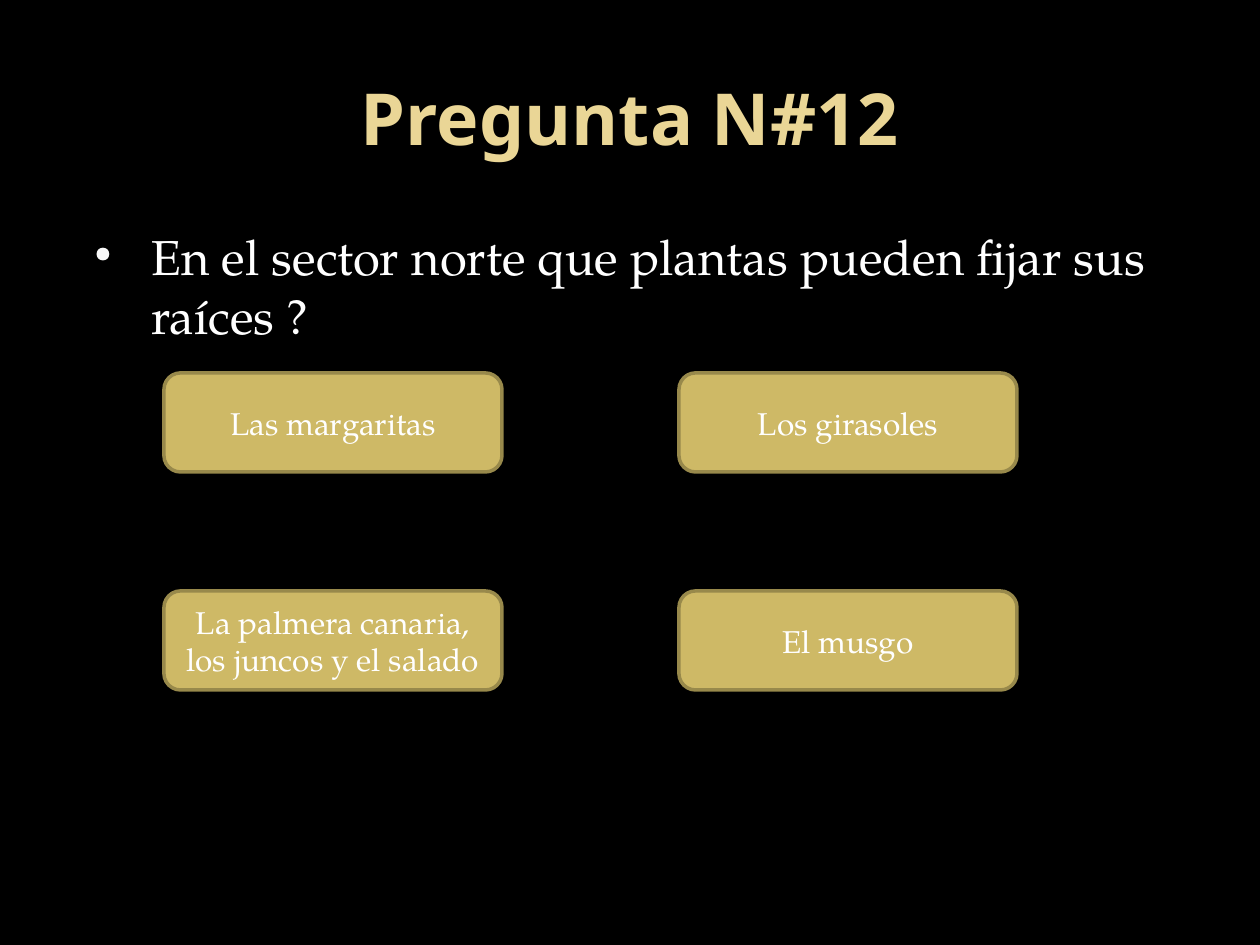
from lxml.etree import SubElement
from pptx import Presentation
from pptx.dml.color import RGBColor
from pptx.enum.shapes import MSO_SHAPE
from pptx.enum.text import MSO_ANCHOR, PP_ALIGN
from pptx.oxml.ns import qn
from pptx.util import Emu, Pt

TITLE = "Pregunta N#12"
QUESTION = "En el sector norte que plantas pueden fijar sus raíces ?"
ANSWERS = [
    ["Las margaritas", "Los girasoles"],
    ["La palmera canaria, los juncos y el salado", "El musgo"],
]

BLACK = RGBColor(0x00, 0x00, 0x00)
WHITE = RGBColor(0xFF, 0xFF, 0xFF)
BULLET_WHITE = RGBColor(0xF9, 0xF9, 0xF9)
PALE_GOLD = RGBColor(0xEA, 0xD6, 0x96)
GOLD = RGBColor(0xCE, 0xB9, 0x66)
DARK_GOLD = RGBColor(0x98, 0x89, 0x4B)
TITLE_FONT = "Noto Sans"
BODY_FONT = "TeX Gyre Pagella"

EMU_PER_PX = 914400 // 126
SLIDE_SIZE = (1260, 945)
TITLE_BOX = (63, 38, 1134, 157)
QUESTION_BOX = (63, 220, 1134, 649)
ANSWER_LEFT, ANSWER_TOP = 164, 373
ANSWER_SIZE = (338, 99)
COLUMN_STEP, ROW_STEP = 515, 218
BULLET_INDENT, BULLET_HANG = 76, 57


def px(length):
    return Emu(length * EMU_PER_PX)


def place(shape, box):
    shape.left, shape.top, shape.width, shape.height = map(px, box)


def write(shape, text, font, size, color, align, anchor, bold=False):
    frame = shape.text_frame
    frame.word_wrap = True
    frame.vertical_anchor = anchor
    paragraph = frame.paragraphs[0]
    paragraph.alignment = align
    run = paragraph.add_run()
    run.text = text
    run.font.name = font
    run.font.size = Pt(size)
    run.font.bold = bold
    run.font.color.rgb = color
    return paragraph


def add_bullet(paragraph):
    properties = paragraph._p.get_or_add_pPr()
    properties.set("marL", str(px(BULLET_INDENT)))
    properties.set("indent", str(-px(BULLET_HANG)))
    color = SubElement(properties, qn("a:buClr"))
    SubElement(color, qn("a:srgbClr"), val=str(BULLET_WHITE))
    SubElement(properties, qn("a:buSzPct"), val="65000")
    SubElement(properties, qn("a:buFont"), typeface=BODY_FONT)
    SubElement(properties, qn("a:buChar"), char="•")


def add_answer(slide, text, row, column):
    left = ANSWER_LEFT + column * COLUMN_STEP
    top = ANSWER_TOP + row * ROW_STEP
    shape = slide.shapes.add_shape(
        MSO_SHAPE.ROUNDED_RECTANGLE, *map(px, (left, top, *ANSWER_SIZE))
    )
    shape.shadow.inherit = False
    shape.fill.solid()
    shape.fill.fore_color.rgb = GOLD
    shape.line.color.rgb = DARK_GOLD
    shape.line.width = Pt(2)
    write(shape, text, BODY_FONT, 18, WHITE, PP_ALIGN.CENTER, MSO_ANCHOR.MIDDLE)


def main():
    presentation = Presentation()
    presentation.slide_width, presentation.slide_height = map(px, SLIDE_SIZE)
    slide = presentation.slides.add_slide(presentation.slide_layouts[5])
    slide.background.fill.solid()
    slide.background.fill.fore_color.rgb = BLACK

    title = slide.shapes.title
    place(title, TITLE_BOX)
    write(title, TITLE, TITLE_FONT, 41, PALE_GOLD,
          PP_ALIGN.CENTER, MSO_ANCHOR.MIDDLE, bold=True)

    question = slide.shapes.add_textbox(*map(px, QUESTION_BOX))
    paragraph = write(question, QUESTION, BODY_FONT, 28, WHITE,
                      PP_ALIGN.LEFT, MSO_ANCHOR.TOP)
    paragraph.space_before = Pt(5.6)
    add_bullet(paragraph)

    for row, answers in enumerate(ANSWERS):
        for column, answer in enumerate(answers):
            add_answer(slide, answer, row, column)

    presentation.save("out.pptx")


if __name__ == "__main__":
    main()
